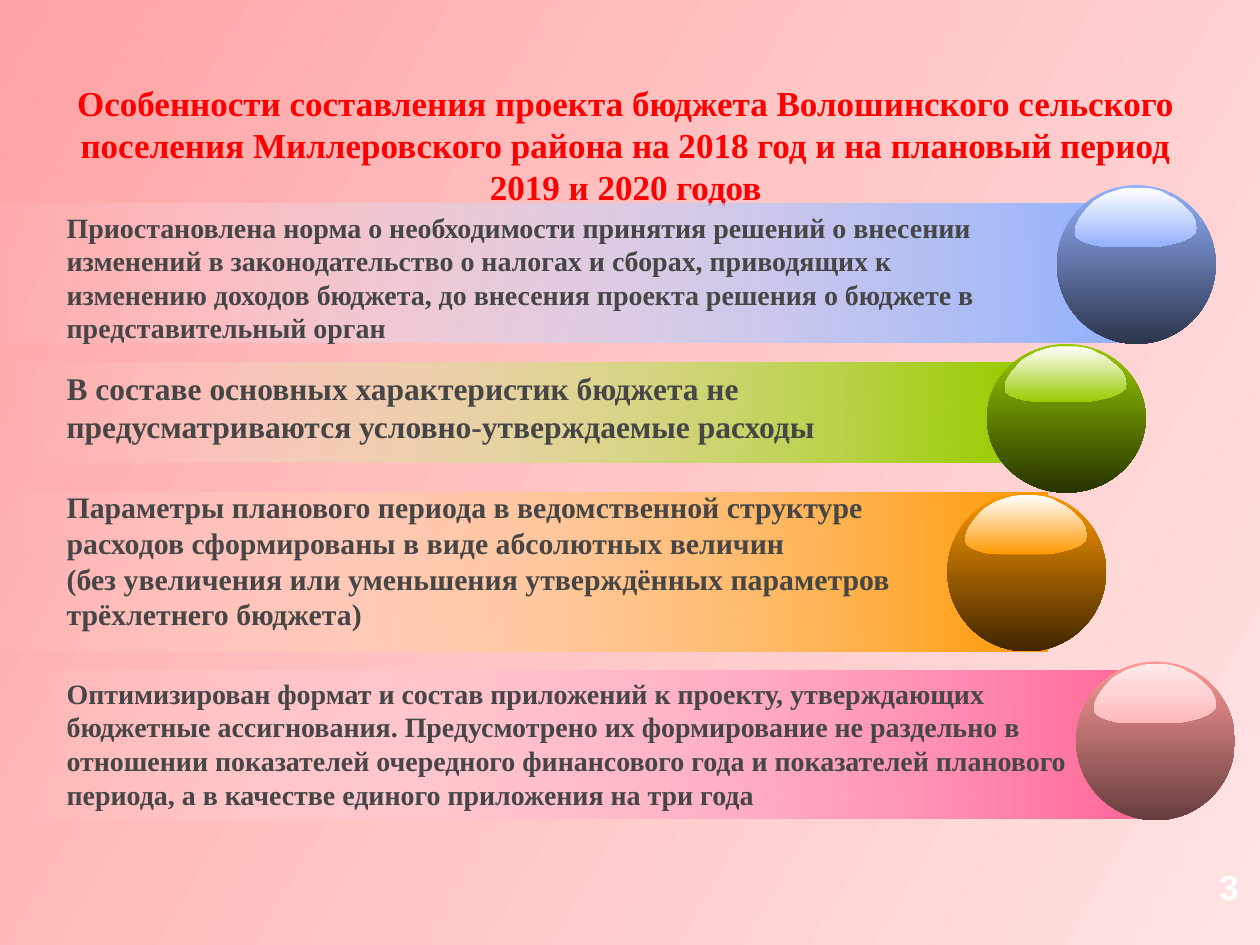
from lxml.etree import SubElement
from pptx import Presentation
from pptx.dml.color import RGBColor
from pptx.enum.shapes import MSO_SHAPE
from pptx.enum.text import MSO_ANCHOR, MSO_AUTO_SIZE, PP_ALIGN
from pptx.oxml.ns import qn
from pptx.util import Pt

COLORS = {
    "title": "FF0000",
    "text": "464646",
    "white": "FFFFFF",
    "background": ["FFA3A4", "FFC6C6", "FFE3E3"],
    "blue": "93B1FD", "blue_dark": "2C354C",
    "green": "99CC00", "green_dark": "263300",
    "orange": "FF9900", "orange_dark": "402600",
    "rose": "FF6699", "pink": "FF9999", "pink_dark": "663D3D",
    "pink_gloss": ["FFE9E9", "FFD2D3", "FFB7B9"],
}

# Highlight outline on a sphere 126 units wide and high
GLOSS = [
    (110, 29), (111, 34), (110, 38), (105, 42), (98, 45), (90, 47), (80, 49),
    (73, 49), (49, 49), (40, 49), (31, 48), (24, 46), (19, 44), (15, 41),
    (14, 37), (15, 32), (18, 26), (21, 22), (25, 17), (29, 13), (34, 10),
    (39, 7), (45, 5), (51, 3), (57, 2), (63, 2), (70, 2), (76, 3), (83, 5),
    (88, 8), (94, 11), (99, 15), (103, 19), (107, 23),
]

# Bar, sphere and text box as left, top, width, height; then font size and paragraphs
ITEMS = [
    {"bar": (-20, 116.6, 663, 79.4), "sphere": (604, 105.8, 90.7, 90.7),
     "colors": ("blue", "blue", "blue_dark"),
     "gloss": [COLORS["white"], COLORS["blue"]],
     "box": (31, 116.6, 550, 85), "size": 16,
     "text": ["Приостановлена норма о необходимости принятия решений о внесении "
              "изменений в законодательство о налогах и сборах, приводящих к "
              "изменению доходов бюджета, до внесения проекта решения о бюджете в "
              "представительный орган"]},
    {"bar": (0, 207.4, 581, 57), "sphere": (564, 196.5, 90.7, 85),
     "colors": ("green", "green", "green_dark"),
     "gloss": [COLORS["white"], COLORS["green"]],
     "box": (31, 207.4, 521, 51), "size": 18,
     "text": ["В составе основных характеристик бюджета не предусматриваются "
              "условно-утверждаемые расходы"]},
    {"bar": (-8.6, 281.5, 607, 90.7), "sphere": (541.4, 281.5, 90.7, 90.7),
     "colors": ("orange", "orange", "orange_dark"),
     "gloss": [COLORS["white"], COLORS["orange"]],
     "box": (31, 275.8, 556, 109), "size": 17,
     "text": ["Параметры планового периода в ведомственной структуре",
              "расходов сформированы в виде абсолютных величин\v"
              "(без увеличения или уменьшения утверждённых параметров "
              "трёхлетнего бюджета)"]},
    {"bar": (0, 383, 654.5, 85), "sphere": (615, 378, 90.7, 90.7),
     "colors": ("rose", "pink", "pink_dark"),
     "gloss": COLORS["pink_gloss"],
     "box": (31, 383, 590, 85), "size": 16,
     "text": ["Оптимизирован формат и состав приложений к проекту, утверждающих "
              "бюджетные ассигнования. Предусмотрено их формирование не раздельно в "
              "отношении показателей очередного финансового года и показателей "
              "планового периода, а в качестве единого приложения на три года"]},
]


def paint_gradient(owner, properties, colors, angle, clear_start=False):
    """Fill with evenly spaced colours; the angle runs clockwise."""
    owner.fill.gradient()
    owner.fill.gradient_angle = -angle % 360
    stop_list = properties.find(".//" + qn("a:gsLst"))
    for stop in list(stop_list):
        stop_list.remove(stop)
    for index, color in enumerate(colors):
        position = str(100000 * index // (len(colors) - 1))
        stop = SubElement(stop_list, qn("a:gs"), pos=position)
        fill_color = SubElement(stop, qn("a:srgbClr"), val=color)
        if clear_start and index == 0:
            SubElement(fill_color, qn("a:alpha"), val="0")
    if owner is not slide.background:
        owner.line.fill.background()
        owner.shadow.inherit = False


def write_text(shape, paragraphs, size, color, font_name="Times New Roman",
               alignment=PP_ALIGN.LEFT):
    frame = shape.text_frame
    frame.word_wrap = True
    frame.auto_size = MSO_AUTO_SIZE.NONE
    frame.vertical_anchor = MSO_ANCHOR.TOP
    frame.text = "\n".join(paragraphs)
    for paragraph in frame.paragraphs:
        paragraph.alignment = alignment
        paragraph.font.name = font_name
        paragraph.font.size = Pt(size)
        paragraph.font.bold = True
        paragraph.font.color.rgb = RGBColor.from_string(color)


presentation = Presentation()
presentation.slide_width, presentation.slide_height = Pt(720), Pt(540)
slide = presentation.slides.add_slide(presentation.slide_layouts[5])

background = slide.background
background.fill.gradient()
background_properties = slide._element.cSld.find(".//" + qn("p:bgPr"))
slide_background = background
background.fill.gradient_angle = 330
stop_list = background_properties.find(".//" + qn("a:gsLst"))
for stop in list(stop_list):
    stop_list.remove(stop)
for position, color in zip((0, 50000, 100000), COLORS["background"]):
    stop = SubElement(stop_list, qn("a:gs"), pos=str(position))
    SubElement(stop, qn("a:srgbClr"), val=color)

title = slide.shapes.title
title.left, title.top, title.width, title.height = Pt(20), Pt(43.2), Pt(675), Pt(80)
write_text(title, ["Особенности составления проекта бюджета Волошинского сельского "
                   "поселения Миллеровского района на 2018 год и на плановый период "
                   "2019 и 2020 годов"], 20, COLORS["title"], alignment=PP_ALIGN.CENTER)

for item in ITEMS:
    bar_color, sphere_color, sphere_dark = (COLORS[name] for name in item["colors"])
    bar = slide.shapes.add_shape(MSO_SHAPE.RECTANGLE, *map(Pt, item["bar"]))
    paint_gradient(bar, bar._element.spPr, [COLORS["white"], bar_color], 0, True)

    left, top, width, height = map(Pt, item["sphere"])
    ball = slide.shapes.add_group_shape()
    sphere = ball.shapes.add_shape(MSO_SHAPE.OVAL, left, top, width, height)
    paint_gradient(sphere, sphere._element.spPr, [sphere_color, sphere_dark], 90)
    builder = ball.shapes.build_freeform(*GLOSS[0], scale=(width / 126, height / 126))
    builder.add_line_segments(GLOSS[1:], close=True)
    gloss = builder.convert_to_shape(left, top)
    paint_gradient(gloss, gloss._element.spPr, item["gloss"], 90)

    box = slide.shapes.add_textbox(*map(Pt, item["box"]))
    write_text(box, item["text"], item["size"], COLORS["text"])

page_number = slide.shapes.add_textbox(Pt(665), Pt(491), Pt(50), Pt(32))
write_text(page_number, ["3"], 20, COLORS["white"], "Arial", PP_ALIGN.RIGHT)

presentation.save("out.pptx")
